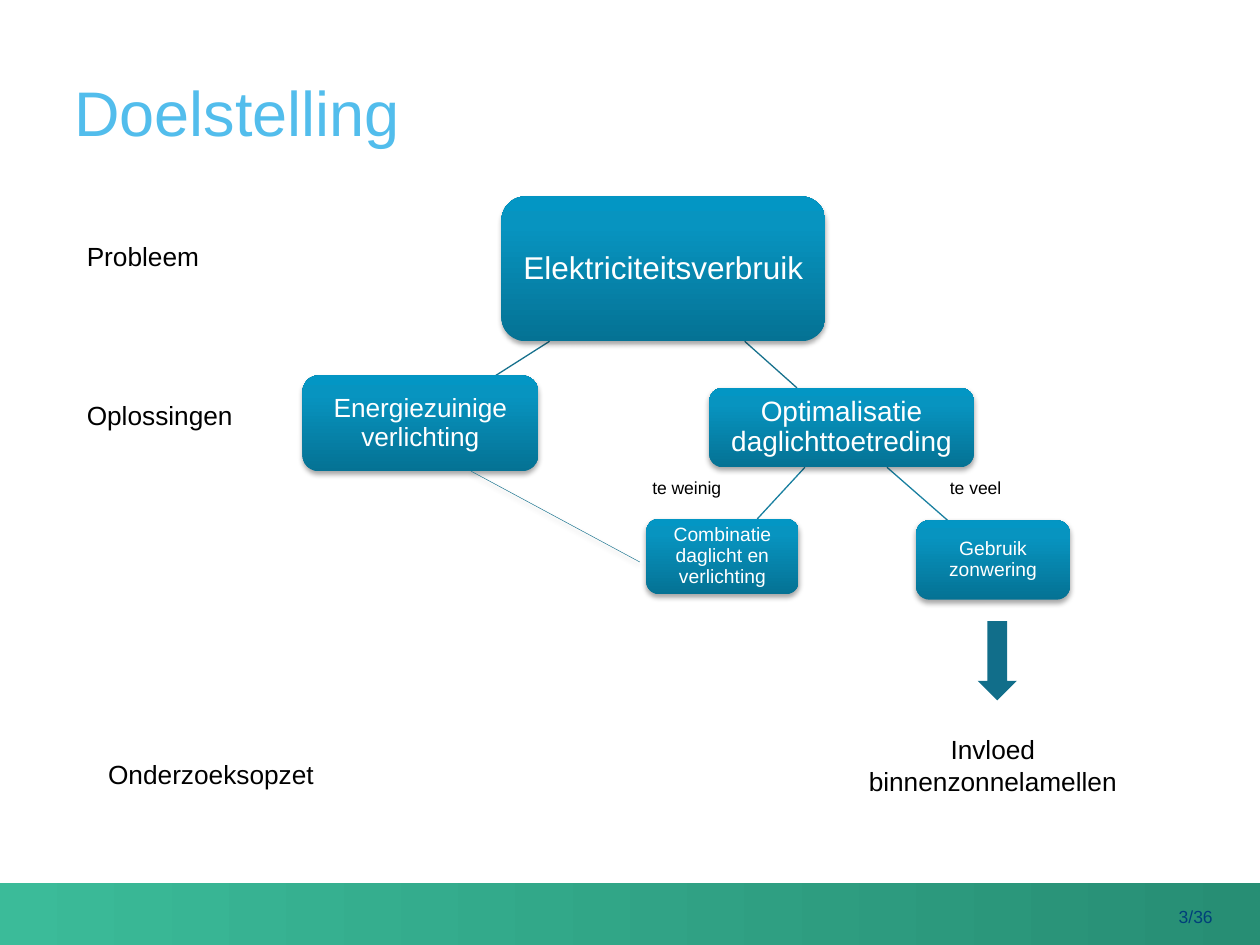
from copy import deepcopy

from lxml import etree
from pptx import Presentation
from pptx import util as u
from pptx.dml.color import RGBColor
from pptx.enum import shapes, text
from pptx.oxml import ns

FONT = "Arial"
COLOURS = {
    "title": "52BDEC",
    "body": "000000",
    "node text": "FFFFFF",
    "page": "00407A",
    "link": "17718D",
    "sublink": "1A80A0",
    "arrow": "116E8A",
    "shadow": "000000",
}
NODE_STOPS = [(0, "057294"), (0.8, "0794C0"), (1, "0396C4")]
BAND_STOPS = [(0, "3BBB99"), (1, "278E74")]
NODES = {
    "Elektriciteitsverbruik": (4.01, 0, 6.53, 2.92, 18, 0.13),
    "Energiezuinige verlichting": (0, 3.61, 4.75, 1.93, 15, 0.1),
    "Optimalisatie daglichttoetreding": (8.2, 3.86, 5.33, 1.6, 16, 0.1),
    "Gebruik zonwering": (12.37, 6.53, 3.1, 1.6, 11, 0.08),
    "Combinatie daglicht en verlichting": (6.93, 6.5, 3.07, 1.52, 11, 0.08),
}
LINKS = [
    ("Elektriciteitsverbruik", "Optimalisatie daglichttoetreding", "link"),
    ("Elektriciteitsverbruik", "Energiezuinige verlichting", "link"),
    ("Optimalisatie daglichttoetreding", "Gebruik zonwering", "sublink"),
    ("Optimalisatie daglichttoetreding", "Combinatie daglicht en verlichting", "sublink"),
]


def rgb(name):
    return RGBColor.from_string(COLOURS[name])


def cm(*lengths):
    return [u.Cm(length) for length in lengths]


def write(frame, words, size, colour, align=text.PP_ALIGN.LEFT, inset=None):
    frame.word_wrap = True
    frame.text = words
    paragraph = frame.paragraphs[0]
    paragraph.alignment = align
    font = paragraph.runs[0].font
    font.name, font.size, font.color.rgb = FONT, u.Pt(size), rgb(colour)
    if inset is not None:
        frame.margin_left = frame.margin_right = u.Cm(inset)
        frame.margin_top = frame.margin_bottom = u.Cm(inset)
    return paragraph


def add_label(slide, box, words, size, colour="body", align=text.PP_ALIGN.LEFT, inset=None):
    frame = slide.shapes.add_textbox(*cm(*box)).text_frame
    write(frame, words, size, colour, align, inset)
    return frame


def fill_gradient(shape, stops, angle):
    shape.fill.gradient()
    shape.fill.gradient_angle = angle
    stop_list = shape._element.spPr.find(".//" + ns.qn("a:gsLst"))
    while len(stop_list) < len(stops):
        stop_list.append(deepcopy(stop_list[-1]))
    for stop, (position, colour) in zip(shape.fill.gradient_stops, stops):
        stop.position = position
        stop.color.rgb = RGBColor.from_string(colour)


def set_shadow(shape, opacity=0, distance=0):
    effects = etree.SubElement(shape._element.spPr, ns.qn("a:effectLst"))
    if opacity:
        shadow = etree.SubElement(
            effects, ns.qn("a:outerShdw"), blurRad=str(u.Pt(3.1)),
            dist=str(u.Pt(distance)), dir="5400000", rotWithShape="0")
        colour = etree.SubElement(shadow, ns.qn("a:srgbClr"), val=COLOURS["shadow"])
        etree.SubElement(colour, ns.qn("a:alpha"), val=str(opacity * 1000))


def add_line(slide, start, end, colour, width):
    line = slide.shapes.add_connector(
        shapes.MSO_CONNECTOR.STRAIGHT, *cm(*start, *end))
    line.line.color.rgb = rgb(colour)
    line.line.width = u.Pt(width)
    return line


def add_link(slide, origin, parent, child, colour):
    (px, py, pw, ph), (cx, cy, cw, ch) = NODES[parent][:4], NODES[child][:4]
    x, y = px + pw / 2, py + ph / 2
    slope = (cx + cw / 2 - x) / (cy + ch / 2 - y)
    ends = [(origin[0] + x + slope * (edge - y), origin[1] + edge)
            for edge in (py + ph, cy)]
    set_shadow(add_line(slide, *ends, colour, 0.75))


def add_node(slide, origin, words, left, top, width, height, size, inset):
    node = slide.shapes.add_shape(
        shapes.MSO_SHAPE.ROUNDED_RECTANGLE,
        *cm(origin[0] + left, origin[1] + top, width, height))
    fill_gradient(node, NODE_STOPS, 90)
    node.line.fill.background()
    set_shadow(node, 35, 1.8)
    node.text_frame.vertical_anchor = text.MSO_ANCHOR.MIDDLE
    paragraph = write(node.text_frame, words, size, "node text",
                      text.PP_ALIGN.CENTER, inset)
    paragraph.line_spacing = 0.9


def add_tree(slide, box):
    left, top = origin = box[:2]
    for link in LINKS:
        add_link(slide, origin, *link)
    for words, place in NODES.items():
        add_node(slide, origin, words, *place)
    for words, offset in (("te veel", 12.8), ("te weinig", 6.8)):
        add_label(slide, (left + offset, top + 5.54, 2.79, 0.69), words, 10)
    combined = add_line(slide, (left + 3.4, top + 5.54), (left + 6.8, top + 7.37), "arrow", 0.25)
    set_shadow(combined, 38, 1.6)


def add_outcome(slide, box):
    left, top, width, height = box
    arrow = slide.shapes.add_shape(
        shapes.MSO_SHAPE.DOWN_ARROW, *cm(left + 3.2, top, 0.79, 1.6))
    arrow.shadow.inherit = False
    arrow.fill.solid()
    arrow.fill.fore_color.rgb = rgb("arrow")
    arrow.line.fill.background()
    add_label(slide, (left, top + 2.14, width, height - 2.14),
              "Invloed binnenzonnelamellen", 15, align=text.PP_ALIGN.CENTER)


def add_stages(slide, box):
    left, top, width = box[:3]
    for words, x, y in (("Probleem", 0, 0), ("Oplossingen", 0, 3.2),
                        ("Onderzoeksopzet", 0.43, 10.44)):
        add_label(slide, (left + x, top + y, width, 0.89), words, 15)


def add_title(slide, box):
    frame = add_label(slide, box, "Doelstelling", 36, "title", inset=0)
    frame.vertical_anchor = text.MSO_ANCHOR.BOTTOM


def add_footer(slide, box):
    left, top = box[:2]
    band = slide.shapes.add_shape(shapes.MSO_SHAPE.RECTANGLE, *cm(*box))
    band.shadow.inherit = False
    fill_gradient(band, BAND_STOPS, 0)
    band.line.fill.background()
    add_label(slide, (left + 22.81, top + 0.45, 2.59, 0.79), "3/36", 10,
              "page", text.PP_ALIGN.CENTER, 0)


def main():
    deck = Presentation()
    deck.slide_width, deck.slide_height = cm(25.4, 19.05)
    slide = deck.slides.add_slide(deck.slide_layouts[6])
    add_footer(slide, (0, 17.81, 25.4, 1.52))
    add_title(slide, (1.5, 0.51, 23.14, 2.49))
    add_tree(slide, (6.1, 3.96, 15.47, 8.13))
    add_outcome(slide, (16.51, 12.52, 7.01, 3.69))
    add_stages(slide, (1.5, 4.72, 4.98, 11.33))
    deck.save("out.pptx")


if __name__ == "__main__":
    main()
